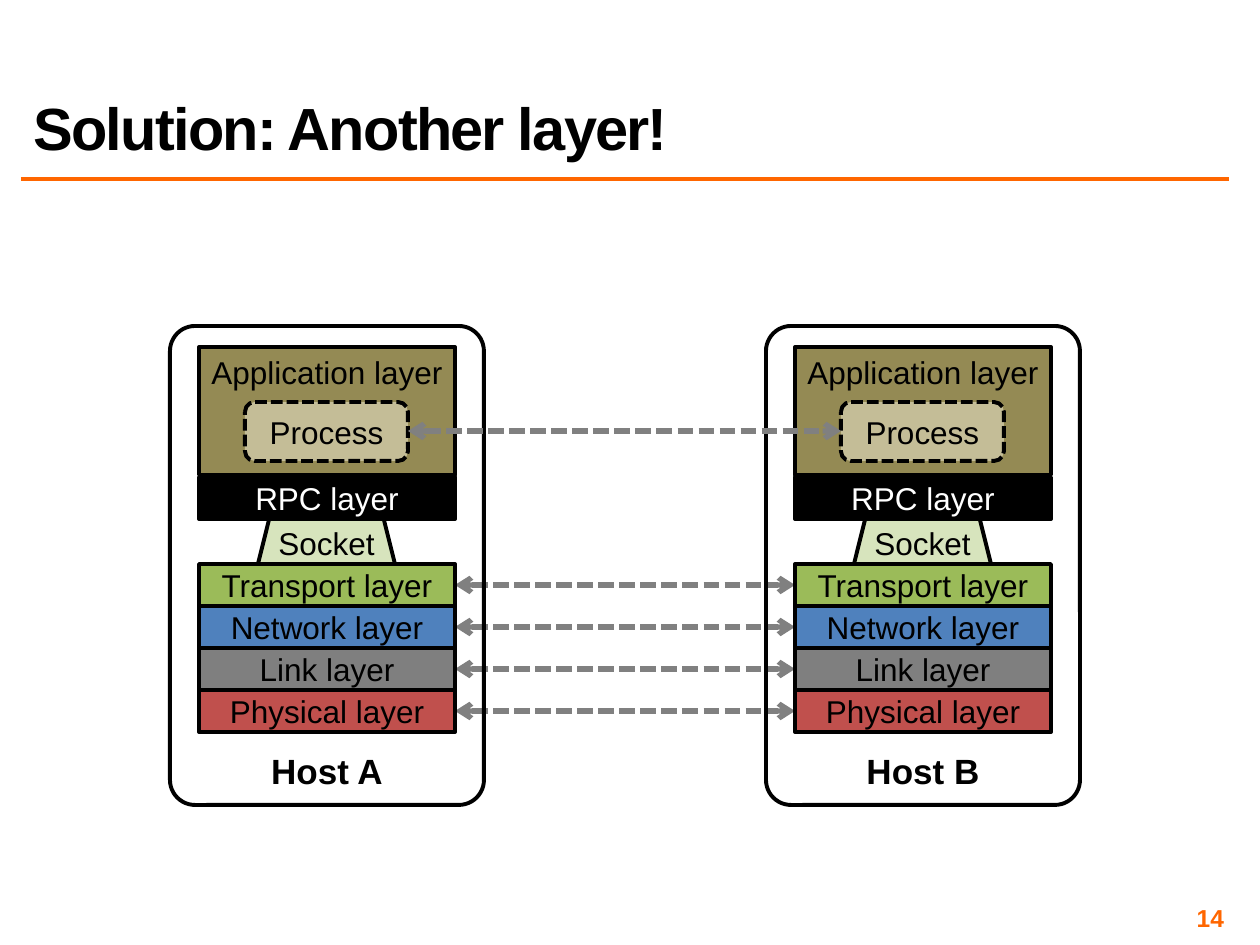
from lxml import etree
from pptx import Presentation
from pptx import util as u
from pptx.dml.color import RGBColor
from pptx.enum import dml, shapes, text
from pptx.oxml.ns import qn

PX_PER_INCH = 126
FONT = "Arial"
BLACK = RGBColor(0x00, 0x00, 0x00)
WHITE = RGBColor(0xFF, 0xFF, 0xFF)
ORANGE = RGBColor(0xFF, 0x66, 0x00)
ARROW_GRAY = RGBColor(0x80, 0x80, 0x80)
LINK_GRAY = RGBColor(0x7F, 0x7F, 0x7F)
OLIVE = RGBColor(0x94, 0x8A, 0x54)
TAN = RGBColor(0xC4, 0xBD, 0x97)
GREEN = RGBColor(0x9B, 0xBB, 0x59)
PALE_GREEN = RGBColor(0xD7, 0xE4, 0xBD)
BLUE = RGBColor(0x4F, 0x81, 0xBD)
RED = RGBColor(0xC0, 0x50, 0x4D)

KIND = shapes.MSO_SHAPE
ANCHOR = text.MSO_ANCHOR
ALIGN = text.PP_ALIGN
DASH = dml.MSO_LINE.SQUARE_DOT

HOSTS = {"Host A": 170, "Host B": 766}
STACK_LEFT, STACK_WIDTH = 29, 256
PROCESS_LEFT, PROCESS_WIDTH = 75, 163
STACK_TOP, LAYER_HEIGHT = 564, 42
STACK = [
    ("Transport layer", GREEN),
    ("Network layer", BLUE),
    ("Link layer", LINK_GRAY),
    ("Physical layer", RED),
]


def px(length):
    """Turn pixels into EMU."""
    return u.Emu(round(length * u.Inches(1) / PX_PER_INCH))


def write(shape, words, size, color, bold=False, align=ALIGN.CENTER):
    """Put one formatted paragraph into a shape and return it."""
    shape.text_frame.text = words
    para = shape.text_frame.paragraphs[0]
    para.alignment = align
    font = para.runs[0].font
    font.name, font.size, font.bold = FONT, u.Pt(size), bold
    font.color.rgb = color
    return para


def add_title(page, words):
    """Fill the title placeholder."""
    title = page.shapes.title
    title.left, title.top, title.width, title.height = map(px, (21, 21, 1207, 147))
    para = write(title, words, 34, BLACK, True, ALIGN.LEFT)
    para.line_spacing = 0.8
    para.runs[0].font._element.set("spc", "-100")
    title.text_frame.vertical_anchor = ANCHOR.BOTTOM
    title.text_frame.auto_size = text.MSO_AUTO_SIZE.NONE


def add_page_number(page, number):
    """Write the page number at the lower right."""
    box = page.shapes.add_textbox(*map(px, (935, 903, 294, 29)))
    frame = box.text_frame
    frame.word_wrap = True
    frame.vertical_anchor = ANCHOR.MIDDLE
    frame.margin_left = frame.margin_right = px(5)
    frame.margin_top = frame.margin_bottom = px(5)
    write(box, number, 14, ORANGE, True, ALIGN.RIGHT)


def add_line(page, left, right, top, color, width):
    """Draw a horizontal line without a shadow."""
    line = page.shapes.add_connector(
        shapes.MSO_CONNECTOR.STRAIGHT, px(left), px(top), px(right), px(top))
    line.line.color.rgb = color
    line.line.width = u.Pt(width)
    etree.SubElement(line._element.spPr, qn("a:effectLst"))
    return line


def add_arrow(page, left, right, top):
    """Draw a dashed line with an arrowhead at each end."""
    arrow = add_line(page, left, right, top, ARROW_GRAY, 3)
    arrow.line.dash_style = DASH
    for end in ("a:headEnd", "a:tailEnd"):
        etree.SubElement(arrow.line._get_or_add_ln(), qn(end), type="arrow")


def add_box(page, kind, bounds, words, fill=None, color=BLACK, size=18,
            bold=False, anchor=ANCHOR.MIDDLE, wrap=True):
    """Draw an outlined shape with centred text."""
    box = page.shapes.add_shape(kind, *map(px, bounds))
    box.shadow.inherit = False
    if fill is None:
        box.fill.background()
    else:
        box.fill.solid()
        box.fill.fore_color.rgb = fill
    box.line.color.rgb = BLACK
    box.line.width = u.Pt(2.25)
    box.text_frame.word_wrap = wrap
    box.text_frame.vertical_anchor = anchor
    write(box, words, size, color, bold)
    return box


def add_layer(page, left, top, height, words, fill, **style):
    """Draw one full-width layer of a host."""
    bounds = (left + STACK_LEFT, top, STACK_WIDTH, height)
    add_box(page, KIND.RECTANGLE, bounds, words, fill, wrap=False, **style)


def add_host(page, name, left):
    """Draw a host with its stack of layers."""
    add_layer(page, left, 347, 128, "Application layer", OLIVE, anchor=ANCHOR.TOP)
    for row, (words, fill) in enumerate(STACK):
        add_layer(page, left, STACK_TOP + row * LAYER_HEIGHT, LAYER_HEIGHT, words, fill)
    frame = add_box(page, KIND.ROUNDED_RECTANGLE, (left, 326, 314, 479), name,
                    size=20, bold=True, anchor=ANCHOR.BOTTOM)
    frame.adjustments[0] = 0.08
    add_box(page, KIND.TRAPEZOID, (left + 88, 519, 137, 45), "Socket", PALE_GREEN)
    process = add_box(page, KIND.FLOWCHART_ALTERNATE_PROCESS,
                      (left + PROCESS_LEFT, 402, PROCESS_WIDTH, 59), "Process", TAN)
    process.line.dash_style = DASH
    add_layer(page, left, 477, LAYER_HEIGHT, "RPC layer", BLACK, color=WHITE)


def main():
    """Build the slide and save it."""
    deck = Presentation()
    deck.slide_width, deck.slide_height = px(1260), px(945)
    page = deck.slides.add_slide(deck.slide_layouts[5])
    add_line(page, 21, 1229, 179, ORANGE, 2)
    add_page_number(page, "14")
    add_title(page, "Solution: Another layer!")
    first, second = HOSTS.values()
    for row in range(len(STACK)):
        middle = STACK_TOP + row * LAYER_HEIGHT + LAYER_HEIGHT // 2
        add_arrow(page, first + STACK_LEFT + STACK_WIDTH, second + STACK_LEFT, middle)
    for name, left in HOSTS.items():
        add_host(page, name, left)
    add_arrow(page, first + PROCESS_LEFT + PROCESS_WIDTH, second + PROCESS_LEFT, 431)
    deck.save("out.pptx")


if __name__ == "__main__":
    main()
